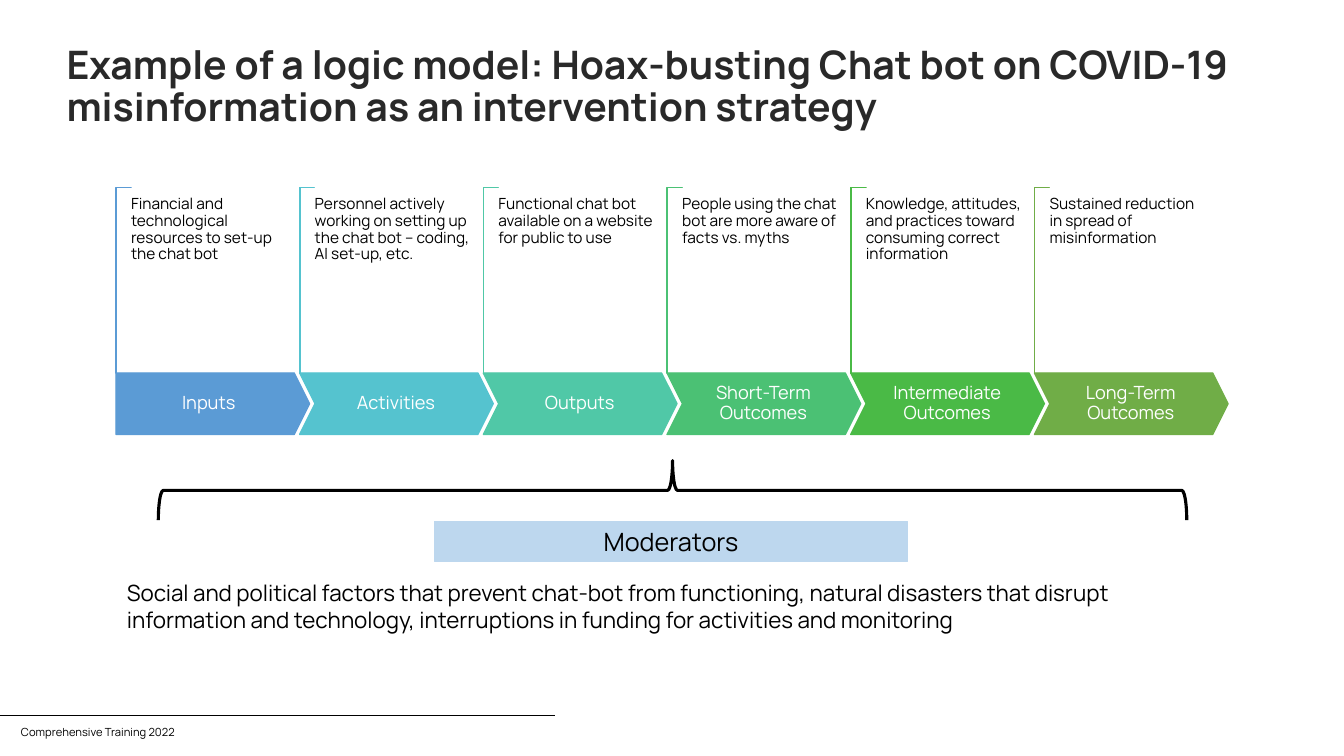
from lxml import etree
from pptx import Presentation
from pptx.dml.color import RGBColor
from pptx.enum.shapes import MSO_CONNECTOR as Connector, MSO_SHAPE as Shape
from pptx.enum.text import MSO_ANCHOR as Anchor, MSO_AUTO_SIZE as AutoSize, PP_ALIGN as Align
from pptx.oxml.ns import qn
from pptx.util import Inches, Pt

FONT = "Manrope"
BLACK = "000000"
WHITE = "FFFFFF"
STAGES = [
    ("Inputs", "Financial and technological resources to set-up the chat bot", "5B9BD5"),
    ("Activities", "Personnel actively working on setting up the chat bot – coding, AI set-up, etc.", "55C3CF"),
    ("Outputs", "Functional chat bot available on a website for public to use", "50C8A7"),
    ("Short-Term Outcomes", "People using the chat bot are more aware of facts vs. myths", "4BC174"),
    ("Intermediate Outcomes", "Knowledge, attitudes, and practices toward consuming correct information", "4ABA46"),
    ("Long-Term Outcomes", "Sustained reduction in spread of misinformation", "70AD47"),
]


def color(value):
    return RGBColor.from_string(value)


def write(box, text, size, ink=BLACK, align=Align.LEFT, anchor=Anchor.TOP,
          spacing=1.0, bold=False, insets=(0.1, 0.05), fit=AutoSize.NONE):
    frame = box.text_frame
    frame.word_wrap = True
    frame.auto_size = fit
    frame.vertical_anchor = anchor
    frame.margin_left = frame.margin_right = Inches(insets[0])
    frame.margin_top = frame.margin_bottom = Inches(insets[1])
    para = frame.paragraphs[0]
    para.alignment = align
    para.line_spacing = spacing
    span = para.add_run()
    span.text = text
    span.font.name = FONT
    span.font.size = Pt(size)
    span.font.bold = bold
    span.font.color.rgb = color(ink)


def add_text(shapes, left, top, width, height, text, size, **style):
    box = shapes.add_textbox(Inches(left), Inches(top), Inches(width), Inches(height))
    write(box, text, size, **style)


def add_shape(shapes, kind, left, top, width, height, fill, line, weight):
    shape = shapes.add_shape(kind, Inches(left), Inches(top), Inches(width), Inches(height))
    shape.shadow.inherit = False
    if fill:
        shape.fill.solid()
        shape.fill.fore_color.rgb = color(fill)
    else:
        shape.fill.background()
    shape.line.color.rgb = color(line)
    shape.line.width = Pt(weight)
    return shape


def add_turned(shapes, kind, left, top, width, height, fill, line, weight):
    shift = (width - height) / 2
    shape = add_shape(shapes, kind, left + shift, top - shift, height, width, fill, line, weight)
    shape.rotation = 90
    return shape


def add_title(page, left, top, width, height):
    title = page.shapes.title
    title.left, title.top = Inches(left), Inches(top)
    title.width, title.height = Inches(width), Inches(height)
    write(title, "Example of a logic model: Hoax-busting Chat bot on COVID-19 "
          "misinformation as an intervention strategy", 28, ink="292929", spacing=0.9, bold=True)


def add_stage(shapes, left, top, first, label, detail, tint):
    bracket = add_turned(shapes, Shape.CORNER, left, top, 0.15, 1.84, WHITE, tint, 1)
    bracket.adjustments[0] = bracket.adjustments[1] = 0.01
    kind = Shape.PENTAGON if first else Shape.CHEVRON
    arrow = add_shape(shapes, kind, left, top + 1.84, 1.92, 0.61, tint, tint, 1)
    arrow.adjustments[0] = 0.25
    indent, width = (0, 1.84) if first else (0.15, 1.61)
    add_text(shapes, left + indent, top + 1.84, width, 0.61, label, 13, ink=WHITE,
             align=Align.CENTER, anchor=Anchor.MIDDLE, spacing=0.9, insets=(0.09, 0.18))
    add_text(shapes, left + 0.15, top + 0.09, 1.56, 1.66, detail, 11, spacing=0.9, insets=(0, 0))


def add_process(page, left, top, width):
    shapes = page.shapes.add_group_shape().shapes
    pitch = (width - 1.92) / (len(STAGES) - 1)
    for index, stage in enumerate(STAGES):
        add_stage(shapes, left + index * pitch, top, index == 0, *stage)


def add_moderators(page, left, top, width):
    add_turned(page.shapes, Shape.LEFT_BRACE, left + 0.41, top, 10.2, 0.59, None, BLACK, 2.25)
    banner = add_shape(page.shapes, Shape.RECTANGLE, left + 3.15, top + 0.6, 4.69, 0.4,
                       "BDD7EE", "BDD7EE", 0.75)
    write(banner, "Moderators", 18, align=Align.CENTER, fit=AutoSize.SHAPE_TO_FIT_TEXT)
    add_text(page.shapes, left, top + 1.13, width, 0.64,
             "Social and political factors that prevent chat-bot from functioning, natural disasters "
             "that disrupt information and technology, interruptions in funding for activities and "
             "monitoring", 16, fit=AutoSize.SHAPE_TO_FIT_TEXT)


def add_footer(page, left, top, width):
    rule = page.shapes.add_connector(Connector.STRAIGHT, Inches(left), Inches(top),
                                     Inches(left + width), Inches(top))
    rule.line.color.rgb = color(BLACK)
    rule.line.width = Pt(0.5)
    etree.SubElement(rule._element.spPr, qn("a:effectLst"))
    add_text(page.shapes, left + 0.17, top + 0.05, 4.39, 0.24, "Comprehensive Training 2022", 8,
             fit=AutoSize.SHAPE_TO_FIT_TEXT)


def main():
    deck = Presentation()
    deck.slide_width, deck.slide_height = Inches(13.33), Inches(7.5)
    page = deck.slides.add_slide(deck.slide_layouts.get_by_name("Title Only"))
    add_footer(page, -0.06, 7.1, 5.56)
    add_title(page, 0.56, 0.4, 12.03, 0.85)
    add_process(page, 1.15, 1.86, 11.03)
    add_moderators(page, 1.16, 4.57, 10.91)
    deck.save("out.pptx")


if __name__ == "__main__":
    main()
